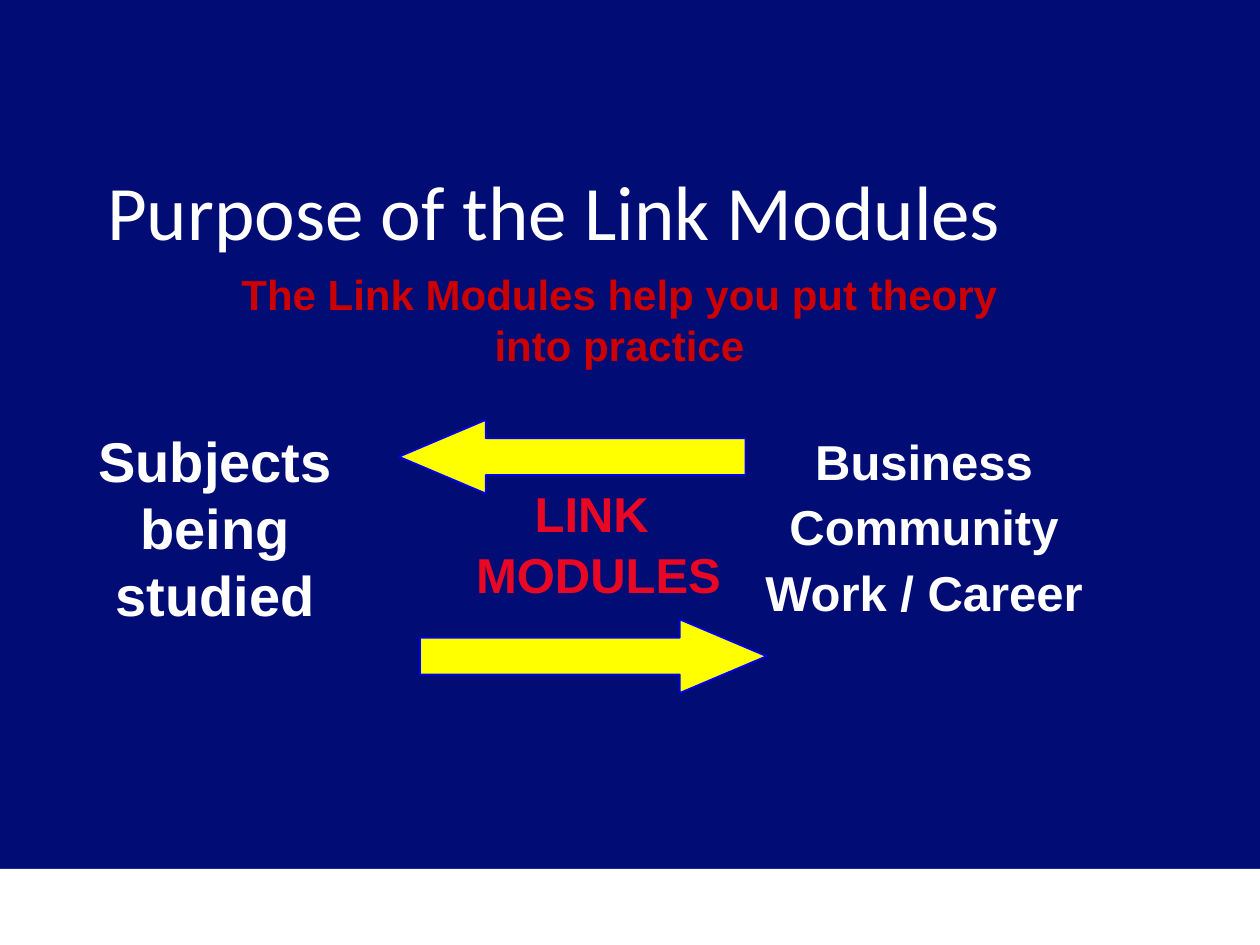
from pptx import Presentation
from pptx.dml.color import RGBColor
from pptx.enum.shapes import MSO_SHAPE
from pptx.enum.text import MSO_ANCHOR, PP_ALIGN
from pptx.util import Pt

PX = 9525
RECT = MSO_SHAPE.RECTANGLE
LEFT = MSO_SHAPE.LEFT_ARROW
RIGHT = MSO_SHAPE.RIGHT_ARROW
MIDDLE = MSO_ANCHOR.MIDDLE
START = PP_ALIGN.LEFT
CENTER = PP_ALIGN.CENTER
COLORS = {
    "navy": "010C75",
    "white": "FFFFFF",
    "yellow": "FFFF00",
    "blue": "0000F0",
    "red": "E80823",
    "dark": "CC0000",
}


def color(name):
    return RGBColor.from_string(COLORS[name])


class Deck:
    def __init__(self, width, height):
        self.show = Presentation()
        self.show.slide_width = width * PX
        self.show.slide_height = height * PX
        self.slide = self.show.slides.add_slide(self.show.slide_layouts[5])
        fill = self.slide.background.fill
        fill.solid()
        fill.fore_color.rgb = color("navy")

    def run(self, para, text, size, tint, face="Arial", bold=True):
        run = para.add_run()
        run.text = text
        font = run.font
        font.name = face
        font.size = Pt(size)
        font.bold = bold
        font.color.rgb = color(tint)

    def title(self, text, box):
        shape = self.slide.shapes.title
        shape.left, shape.top, shape.width, shape.height = [n * PX for n in box]
        frame = shape.text_frame
        frame.word_wrap = True
        frame.vertical_anchor = MIDDLE
        para = frame.paragraphs[0]
        para.alignment = START
        self.run(para, text, 44, "white", "Calibri", False)

    def shape(self, kind, box, tint, edge=None):
        shape = self.slide.shapes.add_shape(kind, *[n * PX for n in box])
        shape.shadow.inherit = False
        shape.fill.solid()
        shape.fill.fore_color.rgb = color(tint)
        if edge:
            shape.line.color.rgb = color(edge)
            shape.line.width = Pt(1)
        else:
            shape.line.fill.background()
        return shape

    def arrow(self, kind, box):
        shape = self.shape(kind, box, "yellow", "blue")
        shape.adjustments[0] = 0.5
        shape.adjustments[1] = 1.18

    def text(self, lines, box, size, tint):
        shape = self.slide.shapes.add_textbox(*[n * PX for n in box])
        frame = shape.text_frame
        frame.word_wrap = True
        for i, (text, pitch) in enumerate(lines):
            para = frame.add_paragraph() if i else frame.paragraphs[0]
            para.alignment = CENTER
            if pitch:
                para.line_spacing = pitch
            if i:
                para.space_before = Pt(size / 2)
            self.run(para, text, size, tint)

    def save(self):
        self.show.save("out.pptx")


def main():
    deck = Deck(960, 720)
    deck.shape(RECT, (0, 662, 960, 58), "white")
    deck.title("Purpose of the Link Modules", (72, 120, 760, 80))
    deck.arrow(RIGHT, (320, 472, 264, 56))
    deck.arrow(LEFT, (304, 320, 264, 56))
    deck.text([("LINK ", 0.7), ("MODULES", 0.6)], (296, 376, 320, 67), 28, "red")
    fields = ["Business", "Community", "Work / Career"]
    deck.text([(name, 0.7) for name in fields], (544, 336, 320, 150), 28, "white")
    deck.text([("Subjects being studied", None)], (24, 320, 280, 165), 32, "white")
    deck.text([("The Link Modules help you put theory into practice", None)],
              (160, 200, 624, 65), 24, "dark")
    deck.save()


if __name__ == "__main__":
    main()
